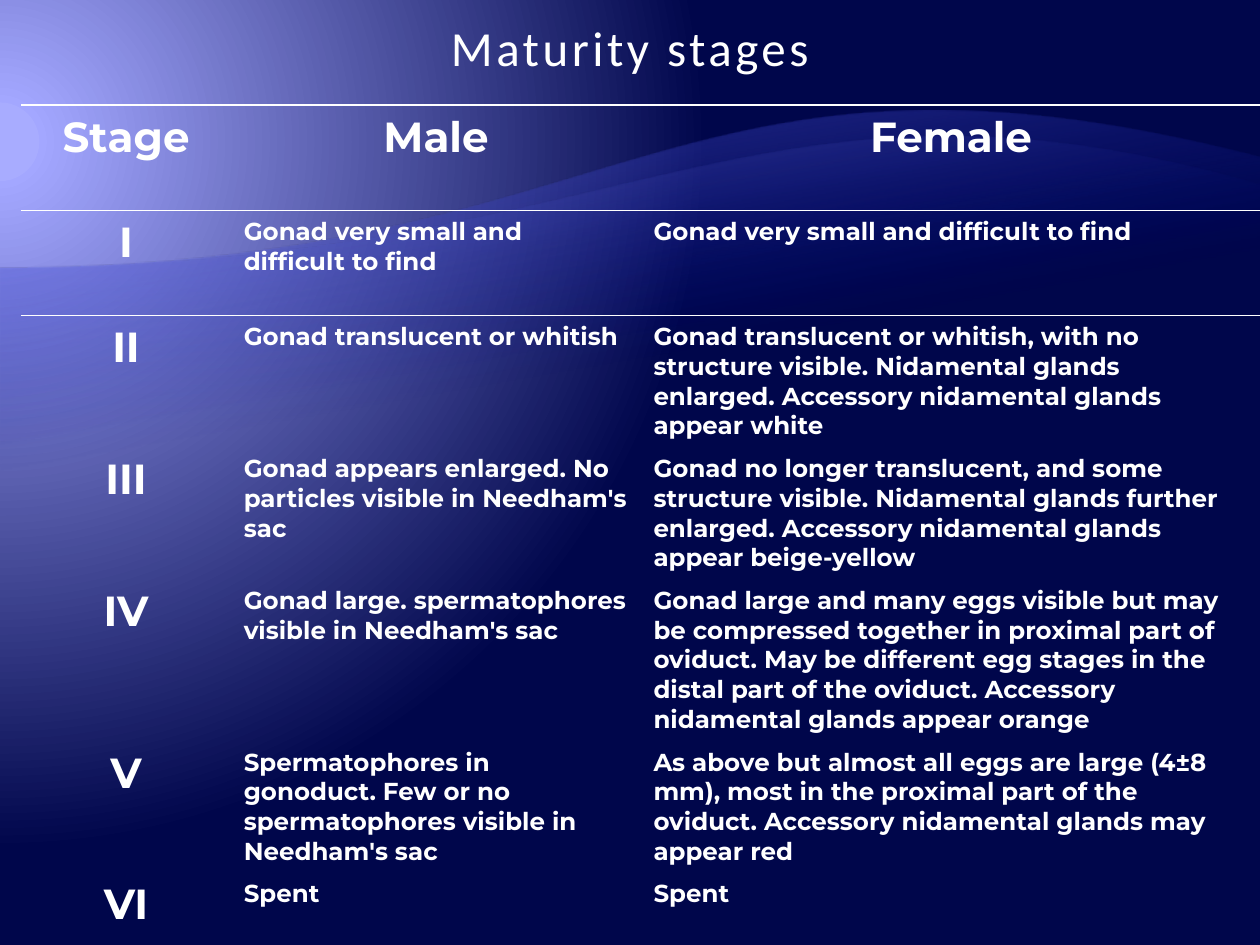
from pptx import Presentation
from pptx.dml.color import RGBColor
from pptx.enum.text import MSO_ANCHOR as Anchor, PP_ALIGN as Align
from pptx.oxml.ns import qn
from pptx.util import Cm, Pt
from lxml.etree import SubElement, Element

WIDTH, HEIGHT = 25.4, 19.05
NO_GRID_STYLE = "{2D5ABB26-0587-4C30-8999-92F81FD0307C}"

COLUMNS = [4.24, 8.26, 12.5]
ROWS = [2.12, 2.12, 2.41, 2.41, 3.1, 2.41, 1.5]
STAGES = [
    ("Stage", "Male", "Female"),
    ("I", "Gonad very small and difficult to find",
     "Gonad very small and difficult to find"),
    ("II", "Gonad translucent or whitish",
     "Gonad translucent or whitish, with no structure visible. Nidamental "
     "glands enlarged. Accessory nidamental glands appear white"),
    ("III", "Gonad appears enlarged. No particles visible in Needham's sac",
     "Gonad no longer translucent, and some structure visible. Nidamental "
     "glands further enlarged. Accessory nidamental glands appear beige-yellow"),
    ("IV", "Gonad large. spermatophores visible in Needham's sac",
     "Gonad large and many eggs visible but may be compressed together in "
     "proximal part of oviduct. May be different egg stages in the distal part "
     "of the oviduct. Accessory nidamental glands appear orange"),
    ("V", "Spermatophores in gonoduct. Few or no spermatophores visible in "
     "Needham's sac",
     "As above but almost all eggs are large (4±8 mm), most in the proximal "
     "part of the oviduct. Accessory nidamental glands may appear red"),
    ("VI", "Spent", "Spent"),
]


def rgb(value):
    return RGBColor.from_string(value)


def write(frame, text, size=14, font="Montserrat", color="FFFFFF", bold=False,
          align=Align.LEFT, before=0, spacing=0):
    """Fill a text frame; before is in percent, spacing in points."""
    paragraph = frame.paragraphs[0]
    paragraph.alignment = align
    if before:
        space = SubElement(paragraph._p.get_or_add_pPr(), qn("a:spcBef"))
        SubElement(space, qn("a:spcPct"), val=str(before * 1000))
    run = paragraph.add_run()
    run.text = text
    run.font.size, run.font.name, run.font.bold = Pt(size), font, bold
    run.font.color.rgb = rgb(color)
    if spacing:
        run.font._element.set("spc", str(spacing * 100))


def shade(owner, fill, stops, angle=None, focus=None):
    """Set a linear (angle) or circular (focus) gradient of (place, colour, opacity)."""
    fill.gradient()
    gradient = owner.find(".//" + qn("a:gradFill"))
    for child in list(gradient):
        gradient.remove(child)
    stop_list = SubElement(gradient, qn("a:gsLst"))
    for place, color, opacity in stops:
        stop = SubElement(stop_list, qn("a:gs"), pos=str(place * 1000))
        tint = SubElement(stop, qn("a:srgbClr"), val=color)
        if opacity < 100:
            SubElement(tint, qn("a:alpha"), val=str(opacity * 1000))
    if focus:
        route = SubElement(gradient, qn("a:path"), path="circle")
        sides = {side: str(part * 1000) for side, part in zip("ltrb", focus)}
        SubElement(route, qn("a:fillToRect"), **sides)
    else:
        SubElement(gradient, qn("a:lin"), ang=str(angle * 60000), scaled="0")


class Deck:
    white = "FFFFFF"

    def __init__(self):
        self.presentation = Presentation()
        self.presentation.slide_width = Cm(WIDTH)
        self.presentation.slide_height = Cm(HEIGHT)
        self.slide = self.presentation.slides.add_slide(
            self.presentation.slide_layouts[5])

    def background(self, stops, focus):
        shade(self.slide.element, self.slide.background.fill, stops, focus=focus)

    def wave(self, curve, bottom, stops, steps=60):
        """Area below a cubic curve that is given by its four points."""
        crest = []
        for step in range(steps + 1):
            t = step / steps
            weights = ((1 - t) ** 3, 3 * t * (1 - t) ** 2, 3 * t * t * (1 - t), t ** 3)
            crest.append(tuple(Cm(sum(w * point[axis] for w, point in zip(weights, curve)))
                               for axis in (0, 1)))
        builder = self.slide.shapes.build_freeform(*crest[0])
        builder.add_line_segments(
            crest[1:] + [(Cm(WIDTH), Cm(bottom)), (0, Cm(bottom))], close=True)
        area = builder.convert_to_shape()
        area.shadow.inherit = False
        area.line.fill.background()
        shade(area.element.spPr, area.fill, stops, angle=260)

    def title(self, text):
        heading = self.slide.shapes.title
        heading.left, heading.top = Cm(0), Cm(0)
        heading.width, heading.height = Cm(WIDTH), Cm(1.9)
        heading.text_frame.vertical_anchor = Anchor.MIDDLE
        write(heading.text_frame, text, size=28, font="Calibri",
              align=Align.CENTER, spacing=2)

    def rule(self, cell, sides):
        """White 1 pt borders on the named sides (T before B)."""
        for index, side in enumerate(sides):
            border = Element(qn("a:ln" + side), w=str(Pt(1)))
            paint = SubElement(border, qn("a:solidFill"))
            SubElement(paint, qn("a:srgbClr"), val=self.white)
            cell._tc.get_or_add_tcPr().insert(index, border)

    def table(self, left, top, columns, rows, content):
        table = self.slide.shapes.add_table(
            len(rows), len(columns), Cm(left), Cm(top),
            Cm(sum(columns)), Cm(sum(rows))).table
        table.first_row = table.horz_banding = False
        table._tbl.tblPr.find(qn("a:tableStyleId")).text = NO_GRID_STYLE
        for column, width in zip(table.columns, columns):
            column.width = Cm(width)
        borders = {0: "TB", 1: "T", len(rows) - 1: "B"}
        for r, (height, texts) in enumerate(zip(rows, content)):
            table.rows[r].height = Cm(height)
            for c, text in enumerate(texts):
                cell = table.cell(r, c)
                cell.fill.background()
                label = r == 0 or c == 0
                write(cell.text_frame, text, size=24 if label else 14, bold=True,
                      align=Align.CENTER if label else Align.LEFT, before=20)
                self.rule(cell, borders.get(r, ""))


def main():
    deck = Deck()
    # Backdrop: glow on the left and two waves
    deck.background([(0, "A8ACFF", 100), (5, "A8ACFF", 100), (5, "A3A7FF", 100),
                     (90, "00064B", 100)], focus=(20, 30, 135, 100))
    deck.wave([(0, 5.41), (12.7, 5.41), (13.56, 0.13), (25.4, 3.18)], 18.62,
              [(65, "000D9E", 0), (100, "797FFF", 55)])
    deck.wave([(0, 5.41), (12.7, 5.41), (15.19, 0.79), (25.4, 3.73)], 16.18,
              [(65, "000D9E", 0), (100, "A3A7FF", 30)])
    # Content
    deck.table(0.42, 2.12, COLUMNS, ROWS, STAGES)
    deck.title("Maturity stages")
    deck.presentation.save("out.pptx")


if __name__ == "__main__":
    main()
